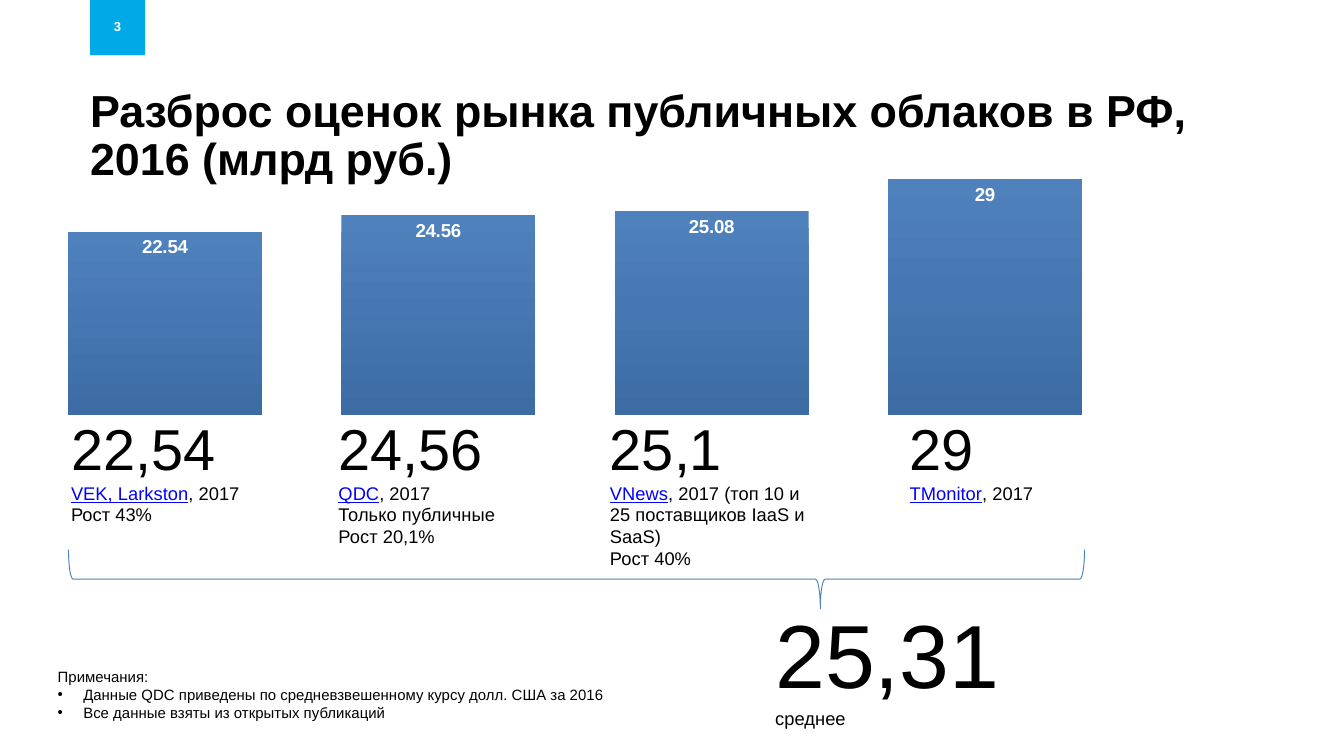
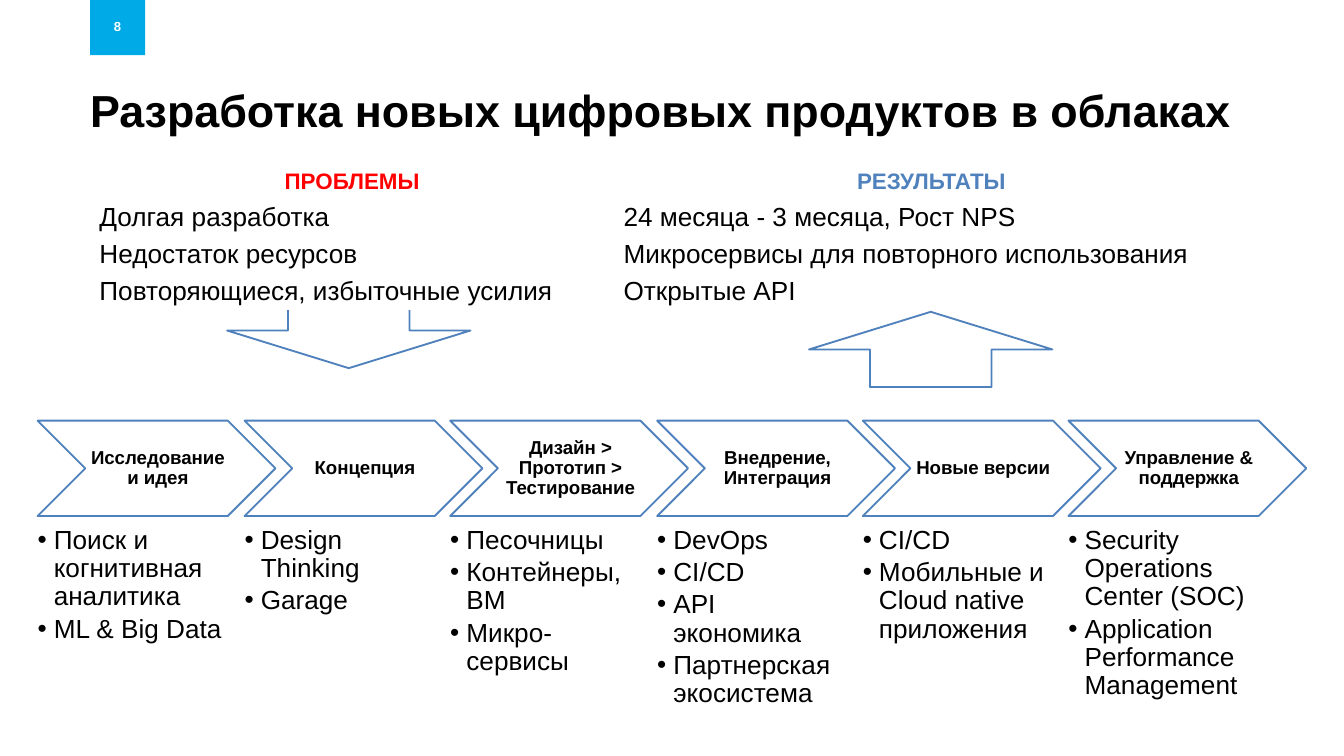
import copy

import pptx
import pptx.chart.data
import pptx.dml.color
import pptx.enum.chart
import pptx.enum.shapes
import pptx.enum.text
import pptx.oxml
import pptx.oxml.ns
import pptx.util

SHAPE = pptx.enum.shapes.MSO_SHAPE
ALIGN = pptx.enum.text.PP_ALIGN
ANCHOR = pptx.enum.text.MSO_ANCHOR
Pt = pptx.util.Pt

FONT = "Arial"
BLACK, WHITE, RED = "000000", "FFFFFF", "FF0000"
CYAN, BLUE, DARK_BLUE, LINK = "00AAE7", "4F81BD", "3D6CA4", "0000FF"


def px(n):
    return pptx.util.Emu(n * 9144)


def rgb(color):
    return pptx.dml.color.RGBColor.from_string(color)


def style_font(font, size, color=BLACK, bold=False, underline=False):
    font.name = FONT
    font.size = Pt(size)
    font.color.rgb = rgb(color)
    font.bold = bold
    font.underline = underline


def add_run(p, text, **fmt):
    for i, line in enumerate(text.split("\n")):
        if i:
            p.add_line_break()
            br = p._p[-1]
            br.append(copy.deepcopy(r._r.rPr))
        r = p.add_run()
        r.text = line
        style_font(r.font, **fmt)


def set_bullet(p, indent):
    pPr = p._p.get_or_add_pPr()
    pPr.set("marL", str(px(indent)))
    pPr.set("indent", str(-px(indent)))
    for tag in (f'buFont {{}} typeface="{FONT}"', 'buChar {} char="•"'):
        pPr.append(pptx.oxml.parse_xml(
            "<a:%s/>" % tag.format(pptx.oxml.ns.nsdecls("a"))))


def write(tf, paragraphs, align=ALIGN.LEFT, spacing=None, before=None,
          after=None, bullet=None, plain=0, **fmt):
    for i, runs in enumerate(paragraphs):
        p = tf.paragraphs[0] if i == 0 else tf.add_paragraph()
        p.alignment = align
        if spacing:
            p.line_spacing = spacing
        if before:
            p.space_before = Pt(before)
        if after:
            p.space_after = Pt(after)
        if bullet and i >= plain:
            set_bullet(p, bullet)
        for text, changes in [(runs, {})] if isinstance(runs, str) else runs:
            add_run(p, text, **{**fmt, **changes})


class Deck:
    def __init__(self):
        self.prs = pptx.Presentation()
        self.prs.slide_width = px(1000)
        self.prs.slide_height = px(1000) * 9 // 16
        self.s = None

    def slide(self, number, title, title_height):
        self.s = self.prs.slides.add_slide(self.prs.slide_layouts[6])
        self.shape(SHAPE.RECTANGLE, 67, 0, 41, 41, fill=CYAN)
        self.text([title], 67, 66, 862, title_height, inset=(0, 0, 0, 0),
                  size=24, bold=True, spacing=0.9)
        self.text([number], 60, 0, 55, 39, anchor=ANCHOR.MIDDLE,
                  align=ALIGN.CENTER, size=7, color=WHITE, bold=True)

    def shape(self, kind, x, y, w, h, fill=None, line=None, weight=1,
              rotation=0, adjust=()):
        sp = self.s.shapes.add_shape(kind, px(x), px(y), px(w), px(h))
        sp.shadow.inherit = False
        sp.rotation = rotation
        for i, value in enumerate(adjust):
            sp.adjustments[i] = value
        if fill:
            sp.fill.solid()
            sp.fill.fore_color.rgb = rgb(fill)
        else:
            sp.fill.background()
        if line:
            sp.line.color.rgb = rgb(line)
            sp.line.width = Pt(weight)
        else:
            sp.line.fill.background()

    def text(self, paragraphs, x, y, w, h, inset=(10, 5, 10, 5),
             anchor=ANCHOR.TOP, **fmt):
        sp = self.s.shapes.add_textbox(px(x), px(y), px(w), px(h))
        tf = sp.text_frame
        tf.word_wrap = True
        tf.vertical_anchor = anchor
        tf.margin_left, tf.margin_top, tf.margin_right, tf.margin_bottom = map(px, inset)
        write(tf, paragraphs, **fmt)

    def columns(self, categories, values, x, y, w, h):
        data = pptx.chart.data.CategoryChartData()
        data.categories = categories
        data.add_series("Series 1", values)
        chart = self.s.shapes.add_chart(
            pptx.enum.chart.XL_CHART_TYPE.COLUMN_CLUSTERED,
            px(x), px(y), px(w), px(h), data).chart
        chart.has_legend = False
        chart.has_title = False
        style_font(chart.font, 10)
        chart.value_axis.minimum_scale = 0
        chart.value_axis.maximum_scale = 35
        chart.value_axis.has_major_gridlines = False
        chart.value_axis.visible = False
        chart.category_axis.visible = False
        plot = chart.plots[0]
        plot.gap_width = 41
        plot.vary_by_categories = False
        series = plot.series[0]
        fill = series.format.fill
        fill.gradient()
        fill.gradient_angle = 270
        for stop, position, color in zip(fill.gradient_stops, (0, 1), (BLUE, DARK_BLUE)):
            stop.position = position
            stop.color.rgb = rgb(color)
        labels = series.data_labels
        labels.show_value = True
        labels.position = pptx.enum.chart.XL_LABEL_POSITION.INSIDE_END
        labels.number_format = "General;;;"
        labels.number_format_is_linked = False
        style_font(labels.font, 10, WHITE, bold=True)

    def table(self, rows, x, y, widths, heights):
        table = self.s.shapes.add_table(
            len(heights), len(widths), px(x), px(y),
            px(sum(widths)), px(sum(heights))).table
        table.first_row = False
        table.horz_banding = False
        for column, width in zip(table.columns, widths):
            column.width = px(width)
        for row, height, contents in zip(table.rows, heights, rows):
            row.height = px(height)
            for cell, (paragraphs, fmt) in zip(row.cells, contents):
                cell.fill.solid()
                cell.fill.fore_color.rgb = rgb(WHITE)
                cell.vertical_anchor = ANCHOR.MIDDLE
                cell.margin_left = cell.margin_right = px(7)
                cell.margin_top = cell.margin_bottom = 0
                write(cell.text_frame, paragraphs, spacing=1.07, before=3, **fmt)


def market_slide(deck):
    deck.slide("3", "Разброс оценок рынка публичных облаков в РФ, 2016 (млрд руб.)", 73)
    estimates = [
        (43, 169, 95, "22,54", "VEK, Larkston", ", 2017\nРост 43%"),
        (242, 169, 112, "24,56", "QDC", ", 2017\nТолько публичные\nРост 20,1%"),
        (444, 169, 128, "25,1", "VNews",
         ", 2017 (топ 10 и 25 поставщиков IaaS и SaaS)\nРост 40%"),
        (667, 112, 79, "29", "TMonitor", ", 2017"),
    ]
    for x, w, h, value, source, details in estimates:
        deck.text([[(value + "\n", {"size": 30.9}),
                    (source, {"color": LINK, "underline": True}),
                    (details, {})]], x, 302, w, h, size=9.8)
    deck.text([[("25,31\n", {"size": 48}), ("среднее", {})]],
              567, 441, 213, 107, size=9.8)
    deck.columns(["1", "2", "3", "4", "5"], [22.54, 24.56, 25.08, 29, 0],
                 0, 93, 1059, 220)
    deck.shape(SHAPE.LEFT_BRACE, 407, 53, 44, 756, line=BLUE, weight=0.5,
               rotation=270, adjust=(0.08, 0.74))
    deck.text(["Примечания:",
               "Данные QDC приведены по средневзвешенному курсу долл. США за 2016",
               "Все данные взяты из открытых публикаций"],
              43, 497, 410, 40, inset=(0, 0, 0, 0), size=8, bullet=19, plain=1)


def products_slide(deck):
    deck.slide("8", "Разработка новых цифровых продуктов в облаках", 36)
    for x, y, rotation in [(602, 232, 180), (169, 218, 0)]:
        deck.shape(SHAPE.DOWN_ARROW, x, y, 181, 56, fill=WHITE, line=BLUE,
                   rotation=rotation)
    stages = [
        ("Исследование и идея", ["Поиск и когнитивная аналитика", "ML & Big Data"]),
        ("Концепция", ["Design Thinking", "Garage"]),
        ("Дизайн > Прототип > Тестирование",
         ["Песочницы", "Контейнеры, ВМ", "Микро-сервисы"]),
        ("Внедрение, Интеграция",
         ["DevOps", "CI/CD", "API экономика", "Партнерская экосистема"]),
        ("Новые версии", ["CI/CD", "Мобильные и Cloud native приложения"]),
        ("Управление & поддержка",
         ["Security Operations Center (SOC)", "Application Performance Management"]),
    ]
    for i, (stage, items) in enumerate(stages):
        x = round(28.3 + 153.4 * i)
        deck.shape(SHAPE.CHEVRON, x, 313, 177, 71, fill=WHITE, line=BLUE)
        deck.text([stage], x + 35, 313, 106, 71, inset=(4, 1, 1, 1),
                  anchor=ANCHOR.MIDDLE, align=ALIGN.CENTER, size=10,
                  bold=True, spacing=0.9)
        deck.text(items, x, 392, 142, 132, inset=(0, 0, 0, 0), size=14,
                  spacing=0.9, after=2.1, bullet=12)
    head = {"size": 12, "bold": True, "align": ALIGN.CENTER}
    body = {"size": 14}
    deck.table([
        [(["ПРОБЛЕМЫ"], {**head, "color": RED}),
         (["РЕЗУЛЬТАТЫ"], {**head, "color": BLUE})],
        [(["Долгая разработка", "Недостаток ресурсов",
           "Повторяющиеся, избыточные усилия"], body),
         (["24 месяца - 3 месяца, Рост NPS",
           "Микросервисы для повторного использования", "Открытые API"], body)],
    ], 67, 122, [390, 472], [25, 76])


def main():
    deck = Deck()
    market_slide(deck)
    products_slide(deck)
    deck.prs.save("out.pptx")


if __name__ == "__main__":
    main()
